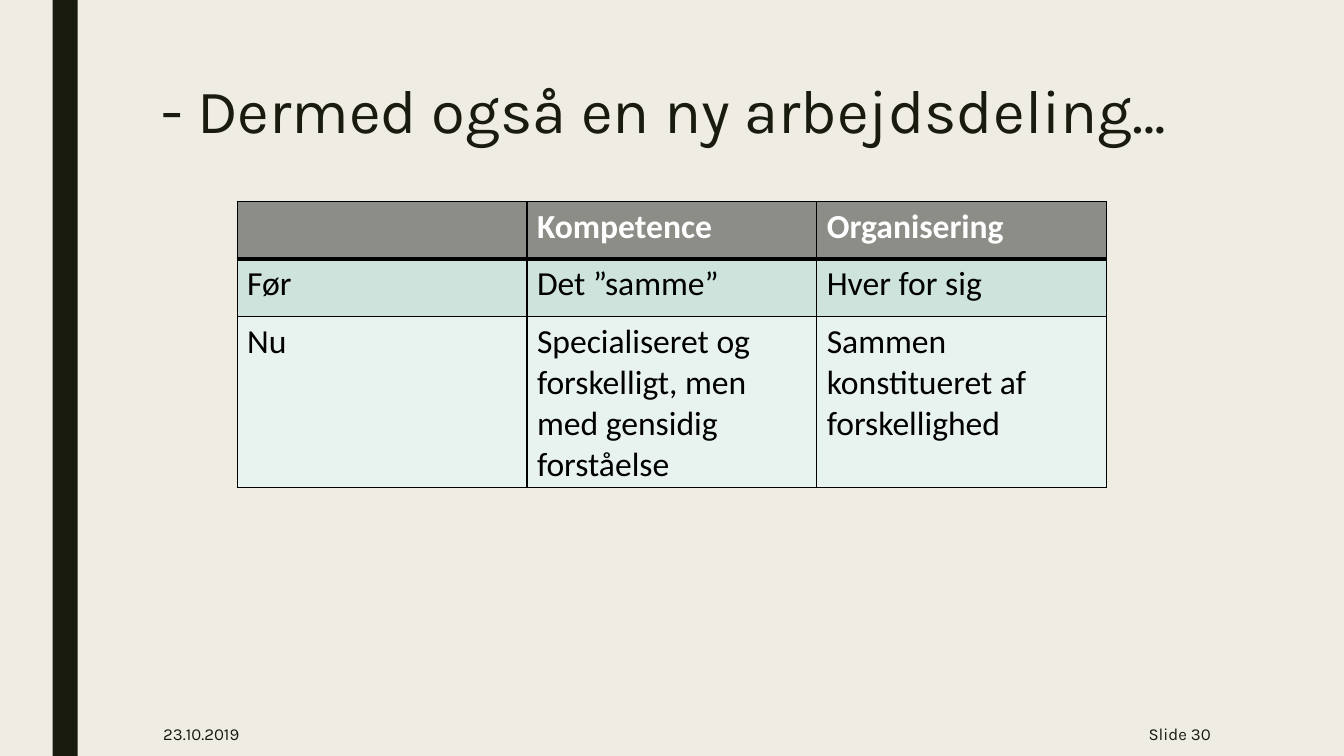
from pptx import Presentation
from pptx.dml.color import RGBColor as RGB
from pptx.enum.shapes import MSO_SHAPE as Shape
from pptx.enum.text import MSO_ANCHOR as Anchor, PP_ALIGN as Align
from pptx.oxml import parse_xml
from pptx.oxml.ns import nsdecls
from pptx.util import Pt

HUES = {
    "paper": "EFEDE3", "ink": "191B0E", "black": "000000", "white": "FFFFFF",
    "head": "8C8D86", "mint": "CDE3DB", "pale": "E8F2EE",
}


class Deck:
    """Holds the style and the current slide."""

    def __init__(self, wide, high):
        self.prs = Presentation()
        self.prs.slide_width, self.prs.slide_height = Pt(wide), Pt(high)
        self.slide = self.prs.slides.add_slide(self.prs.slide_layouts[6])
        self.paint(self.slide.background.fill, "paper")

    def paint(self, fill, hue):
        fill.solid()
        fill.fore_color.rgb = RGB.from_string(HUES[hue])

    def add_text(self, para, text, size, face, hue, bold=False):
        run = para.add_run()
        run.text = text
        font = run.font
        font.size, font.name, font.bold = Pt(size), face, bold
        font.color.rgb = RGB.from_string(HUES[hue])

    def bar(self, x, y, w, h, hue):
        bar = self.slide.shapes.add_shape(
            Shape.RECTANGLE, Pt(x), Pt(y), Pt(w), Pt(h))
        bar.shadow.inherit = False
        bar.line.fill.background()
        self.paint(bar.fill, hue)

    def label(self, x, y, w, h, text, size,
              anchor=Anchor.MIDDLE, align=Align.LEFT, gap=1.0):
        box = self.slide.shapes.add_textbox(Pt(x), Pt(y), Pt(w), Pt(h))
        frame = box.text_frame
        frame.word_wrap = True
        frame.vertical_anchor = anchor
        para = frame.paragraphs[0]
        para.alignment, para.line_spacing = align, gap
        self.add_text(para, text, size, "Karla", "ink")

    def edge(self, cell, sides):
        props = cell._tc.get_or_add_tcPr()
        for i, (side, width) in enumerate(sides.items()):
            props.insert(i, parse_xml(
                f'<a:ln{side} {nsdecls("a")} w="{Pt(width)}"><a:solidFill>'
                f'<a:srgbClr val="{HUES["black"]}"/></a:solidFill></a:ln{side}>'))

    def table(self, x, y, wide, highs, rows, fills):
        cols = len(rows[0])
        grid = self.slide.shapes.add_table(
            len(rows), cols, Pt(x), Pt(y), Pt(wide * cols), Pt(sum(highs))).table
        grid.horz_banding = False
        for col in grid.columns:
            col.width = Pt(wide)
        for r, row in enumerate(rows):
            grid.rows[r].height = Pt(highs[r])
            head = r == 0
            for c, text in enumerate(row):
                cell = grid.cell(r, c)
                self.paint(cell.fill, fills[r])
                # Thick rule between header and body
                self.edge(cell, {"L": 1, "R": 1, "T": 3 if r == 1 else 1,
                                 "B": 3 if head else 1})
                if text:
                    self.add_text(cell.text_frame.paragraphs[0], text, 24,
                                  "Calibri", "white" if head else "black", head)


def main():
    deck = Deck(960, 540)

    # Side bar and title
    deck.bar(37.5, 0, 18, 540, "ink")
    deck.label(108, 54, 756, 116.6, "- Dermed også en ny arbejdsdeling…", 44,
               Anchor.TOP, gap=0.89)

    # Division of work, before and now
    deck.table(169.4, 144, 207, [41, 41, 122.4], [
        ["", "Kompetence", "Organisering"],
        ["Før", "Det ”samme”", "Hver for sig"],
        ["Nu", "Specialiseret og forskelligt, men med gensidig forståelse",
         "Sammen konstitueret af forskellighed"],
    ], ["head", "mint", "pale"])

    # Footer
    deck.label(109.5, 508.5, 95, 31.5, "23.10.2019", 12)
    deck.label(746, 508.5, 126, 31.5, "Slide 30", 12, align=Align.RIGHT)

    deck.prs.save("out.pptx")


if __name__ == "__main__":
    main()
